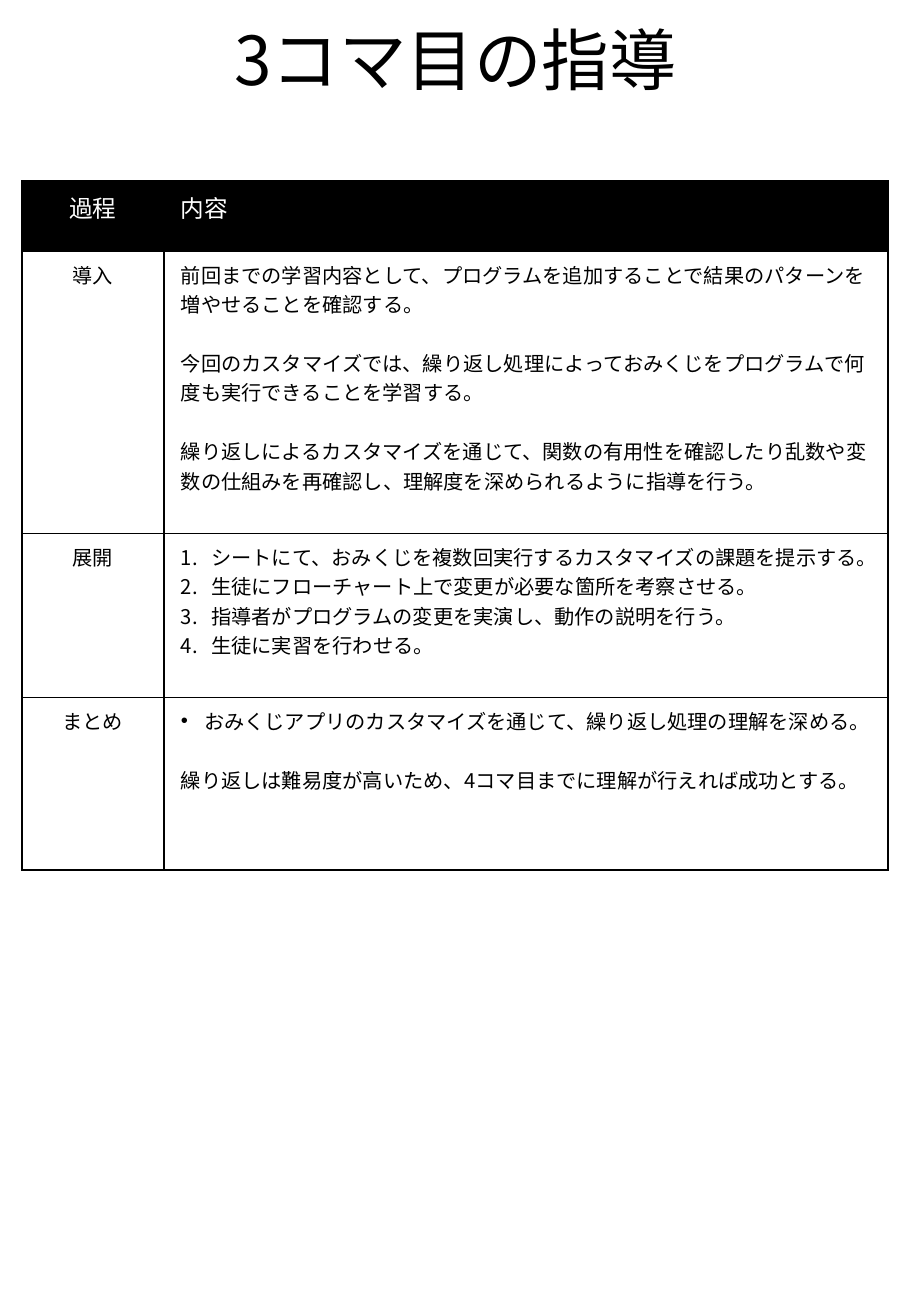
"""Build a one-page lesson plan slide with a title and a process table."""
import pptx
import pptx.util
import pptx.dml.color
import pptx.enum.text
import pptx.oxml
import pptx.oxml.ns

Inches = pptx.util.Inches
Pt = pptx.util.Pt
qn = pptx.oxml.ns.qn
ALIGN = pptx.enum.text.PP_ALIGN
ANCHOR = pptx.enum.text.MSO_ANCHOR
BLACK = pptx.dml.color.RGBColor(0x00, 0x00, 0x00)
WHITE = pptx.dml.color.RGBColor(0xFF, 0xFF, 0xFF)
FONT = "Noto Sans CJK JP"
BLANK_LINE = Pt(17.4)


def add_xml(parent, tag, index=None, **attrs):
    el = pptx.oxml.parse_xml(f"<{tag} {pptx.oxml.ns.nsdecls('a')}/>")
    for name, value in attrs.items():
        el.set(name, str(value))
    parent.insert(len(parent) if index is None else index, el)
    return el


def format_text(p, size, color):
    for r in p.runs:
        r.font.size = Pt(size)
        r.font.color.rgb = color
        r.font.name = FONT
        add_xml(r.font._element, "a:ea", typeface=FONT)


prs = pptx.Presentation()
prs.slide_width = Inches(7.5)
prs.slide_height = Inches(10.83)
s = prs.slides.add_slide(prs.slide_layouts[6])

tf = s.shapes.add_textbox(Inches(0.56), Inches(0.06), Inches(6.38), Inches(0.81)).text_frame
tf.word_wrap = True
tf.vertical_anchor = ANCHOR.BOTTOM
tf.text = "3コマ目の指導"
p = tf.paragraphs[0]
p.alignment = ALIGN.CENTER
p.line_spacing = 0.9
format_text(p, 40, BLACK)

# Each paragraph: text, list marker, gap before
rows = [
    (0.58, "過程", [("内容", None, False)]),
    (2.32, "導入", [
        ("前回までの学習内容として、プログラムを追加することで結果のパターンを増やせることを確認する。", None, False),
        ("今回のカスタマイズでは、繰り返し処理によっておみくじをプログラムで何度も実行できることを学習する。", None, True),
        ("繰り返しによるカスタマイズを通じて、関数の有用性を確認したり乱数や変数の仕組みを再確認し、"
         "理解度を深められるように指導を行う。", None, True),
    ]),
    (1.35, "展開", [
        ("シートにて、おみくじを複数回実行するカスタマイズの課題を提示する。", "number", False),
        ("生徒にフローチャート上で変更が必要な箇所を考察させる。", "number", False),
        ("指導者がプログラムの変更を実演し、動作の説明を行う。", "number", False),
        ("生徒に実習を行わせる。", "number", False),
    ]),
    (1.42, "まとめ", [
        ("おみくじアプリのカスタマイズを通じて、繰り返し処理の理解を深める。", "bullet", False),
        ("繰り返しは難易度が高いため、4コマ目までに理解が行えれば成功とする。", None, True),
    ]),
]
indents = {"number": 0.25, "bullet": 0.19}

height = sum(row[0] for row in rows)
table = s.shapes.add_table(len(rows), 2, Inches(0.18), Inches(1.49), Inches(7.13), Inches(height)).table
table.horz_banding = False
for col, width in zip(table.columns, (1.17, 5.96)):
    col.width = Inches(width)

for i, (row_height, process, content) in enumerate(rows):
    table.rows[i].height = Inches(row_height)
    size, color, fill = (14, WHITE, BLACK) if i == 0 else (12, BLACK, WHITE)
    for j, paragraphs in enumerate(([(process, None, False)], content)):
        cell = table.cell(i, j)
        cell.margin_left = cell.margin_right = Inches(0.14)
        cell.margin_top = cell.margin_bottom = Inches(0.07)
        cell.fill.solid()
        cell.fill.fore_color.rgb = fill
        tcPr = cell._tc.get_or_add_tcPr()
        for k, side in enumerate(("lnL", "lnR", "lnT", "lnB")):
            line = add_xml(tcPr, f"a:{side}", k, w=Pt(1))
            add_xml(add_xml(line, "a:solidFill"), "a:srgbClr", val=BLACK)
        tf = cell.text_frame
        tf.text = "\n".join(text for text, marker, gap in paragraphs)
        for p, (text, marker, gap) in zip(tf.paragraphs, paragraphs):
            p.alignment = ALIGN.LEFT if j else ALIGN.CENTER
            if gap:
                p.space_before = BLANK_LINE
            if marker:
                pPr = p._p.get_or_add_pPr()
                indent = Inches(indents[marker])
                pPr.set("marL", str(indent))
                pPr.set("indent", str(-indent))
                if marker == "number":
                    add_xml(pPr, "a:buFont", typeface=FONT)
                    add_xml(pPr, "a:buAutoNum", type="arabicPeriod")
                else:
                    add_xml(pPr, "a:buFont", typeface="Arial")
                    add_xml(pPr, "a:buChar", char="•")
            format_text(p, size, color)

prs.save("out.pptx")
